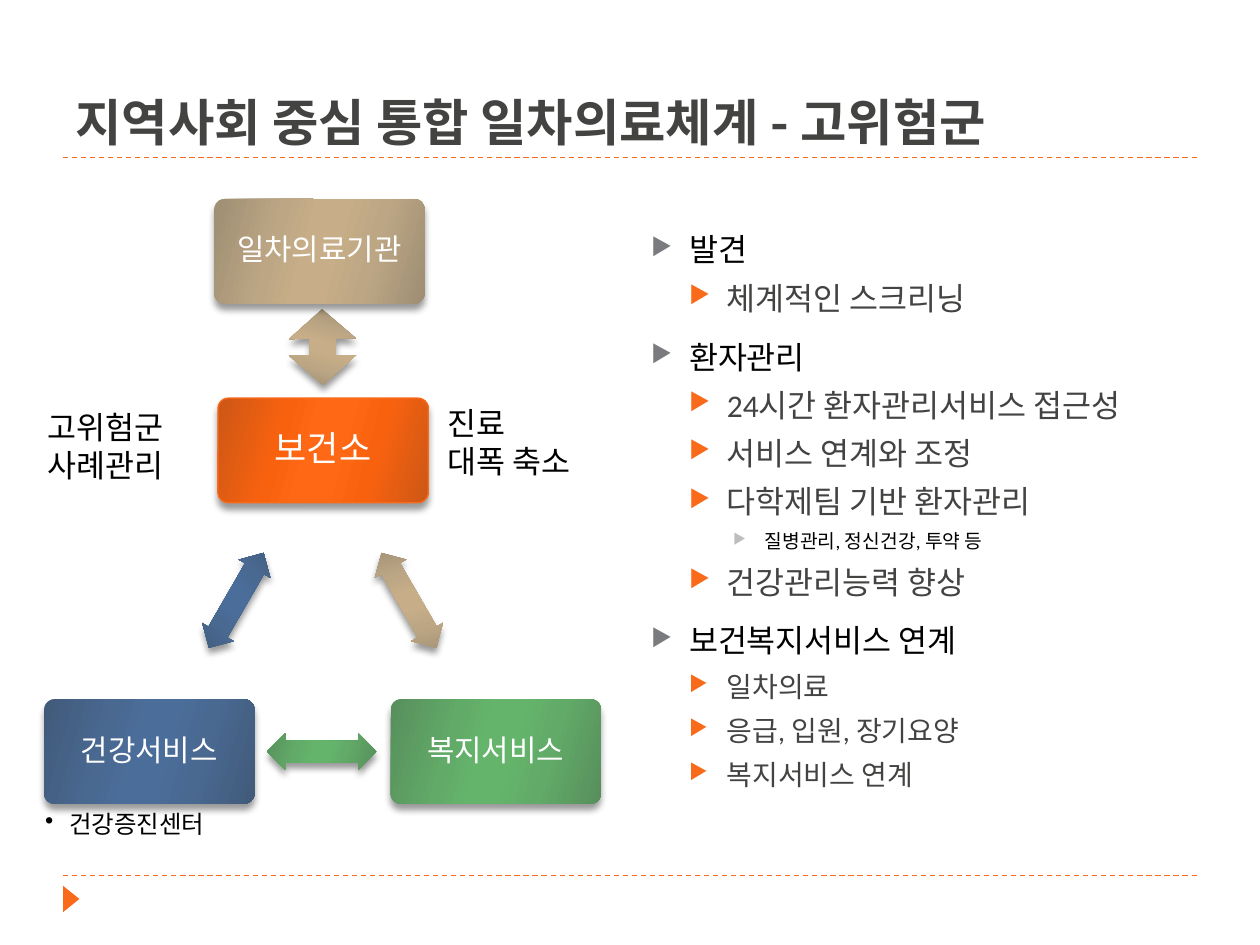
from lxml import etree
from pptx import Presentation
from pptx.dml.color import RGBColor
from pptx.enum.dml import MSO_LINE
from pptx.enum.shapes import MSO_CONNECTOR, MSO_SHAPE
from pptx.enum.text import MSO_ANCHOR, PP_ALIGN
from pptx.oxml.ns import qn
from pptx.util import Inches, Pt

BOX = MSO_SHAPE.ROUNDED_RECTANGLE
ARROW = MSO_SHAPE.LEFT_RIGHT_ARROW
TRIANGLE = MSO_SHAPE.ISOSCELES_TRIANGLE
STRAIGHT = MSO_CONNECTOR.STRAIGHT
DASH = MSO_LINE.DASH
TOP, MIDDLE, BOTTOM = MSO_ANCHOR.TOP, MSO_ANCHOR.MIDDLE, MSO_ANCHOR.BOTTOM
LEFT, CENTER = PP_ALIGN.LEFT, PP_ALIGN.CENTER

LATIN, KOREAN = "Calibri", "Noto Sans CJK KR"
ACCENT, DARK, BLACK, WHITE = "F96A1B", "434342", "000000", "FFFFFF"
# Gradient tones: edge, shoulder, centre
TAN = ("9F8E73", "BCA684", "C7AE88")
ORANGE = ("CC5716", "F8620F", "FF6815")
GREEN = ("578F5C", "62AA68", "64B56B")
BLUE = ("415A79", "496991", "4A6D9A")

COLUMNS, ROWS = 100, 75
NODE_SIZE = (16.7, 8.3)
LINK_SIZE = (8.7, 2.9)

# Outline level: indent, hanging, space before, bullet colour, text colour
LEVELS = [
    (0.3, 0.3, 12, "797B7E", BLACK),
    (0.6, 0.3, 6, ACCENT, DARK),
    (0.9, 0.25, 5, "BDBDBD", BLACK),
]
OUTLINE = [
    (0, 18, "발견"),
    (1, 18, "체계적인 스크리닝"),
    (0, 18, "환자관리"),
    (1, 18, "24시간 환자관리서비스 접근성"),
    (1, 18, "서비스 연계와 조정"),
    (1, 18, "다학제팀 기반 환자관리"),
    (2, 11, "질병관리, 정신건강, 투약 등"),
    (1, 18, "건강관리능력 향상"),
    (0, 18, "보건복지서비스 연계"),
    (1, 16, "일차의료"),
    (1, 16, "응급, 입원, 장기요양"),
    (1, 16, "복지서비스 연계"),
]
# Left, top, tones, label, text size, outline colour
NODES = [
    (17.3, 31.6, ORANGE, "보건소", 20, ACCENT),
    (31, 55.5, GREEN, "복지서비스", 17, None),
    (3.5, 55.5, BLUE, "건강서비스", 17, None),
    (17, 15.8, TAN, "일차의료기관", 17, None),
]
# Left, top, size, rotation, tones, adjustments
LINKS = [
    (28.1, 46.2, LINK_SIZE, 60, TAN, (0.6, 0.5)),
    (21.2, 58.2, LINK_SIZE, 180, GREEN, (0.6, 0.5)),
    (14.4, 46.2, LINK_SIZE, 300, BLUE, (0.6, 0.5)),
    (22.6, 24.9, (6, 5.3), 89.3, TAN, (0.39, 0.44)),
]


def rgb(color):
    return RGBColor.from_string(color)


def add_xml(parent, tag, **attributes):
    return etree.SubElement(parent, qn(tag), attributes)


class SlideBuilder:
    """Draws on one slide; positions count columns and rows of the grid."""

    def __init__(self, deck):
        self.column = deck.slide_width / COLUMNS
        self.row = deck.slide_height / ROWS
        self.slide = deck.slides.add_slide(deck.slide_layouts[6])

    def place(self, left, top, width, height):
        return (round(left * self.column), round(top * self.row),
                round(width * self.column), round(height * self.row))

    def rule(self, row):
        left, y, width, _ = self.place(5, row, 90, 0)
        rule = self.slide.shapes.add_connector(STRAIGHT, left, y, left + width, y)
        rule.line.color.rgb = rgb(ACCENT)
        rule.line.width = Pt(0.75)
        rule.line.dash_style = DASH
        add_xml(rule._element.spPr, "a:effectLst")

    def shape(self, kind, area, rotation=0, adjustments=()):
        shape = self.slide.shapes.add_shape(kind, *self.place(*area))
        shape.rotation = rotation
        for index, value in enumerate(adjustments):
            shape.adjustments[index] = value
        shape.shadow.inherit = False
        shape.line.fill.background()
        return shape

    def marker(self, area, color):
        marker = self.shape(TRIANGLE, area, 90)
        marker.fill.solid()
        marker.fill.fore_color.rgb = rgb(color)

    def glossy(self, kind, area, tones, rotation=0, adjustments=()):
        """Shape with a symmetric gradient and a soft shadow below."""
        shape = self.shape(kind, area, rotation, adjustments)
        shape.fill.gradient()
        shape.fill.gradient_angle = 344
        properties = shape._element.spPr
        stops = properties.find(".//" + qn("a:gsLst"))
        for stop in list(stops):
            stops.remove(stop)
        edge, shoulder, centre = tones
        for share, color in zip((0, 30, 45, 55, 73, 100),
                                (edge, shoulder, centre, centre, shoulder, edge)):
            stop = add_xml(stops, "a:gs", pos=str(share * 1000))
            add_xml(stop, "a:srgbClr", val=color)
        shadow = add_xml(properties.find(qn("a:effectLst")), "a:outerShdw",
                         blurRad=str(Pt(4)), dist=str(Pt(3.4)), dir="5400000",
                         rotWithShape="0")
        add_xml(add_xml(shadow, "a:srgbClr", val=BLACK), "a:alpha", val="40000")
        return shape

    def node(self, left, top, tones, label, size, outline):
        node = self.glossy(BOX, (left, top, *NODE_SIZE), tones, adjustments=(0.1,))
        if outline:
            node.line.color.rgb = rgb(outline)
            node.line.width = Pt(0.75)
        frame = node.text_frame
        frame.word_wrap = True
        frame.vertical_anchor = MIDDLE
        frame.text = label
        self.format(frame.paragraphs[0], size, WHITE, LATIN, align=CENTER, spacing=0.9)

    def format(self, paragraph, size, color, font, bold=False, align=LEFT, spacing=1):
        paragraph.alignment = align
        paragraph.line_spacing = spacing
        for run in paragraph.runs:
            run.font.size = Pt(size)
            run.font.bold = bold
            run.font.name = font
            run.font.color.rgb = rgb(color)
            add_xml(run.font._element, "a:ea", typeface=KOREAN)

    def bullet(self, paragraph, symbol, indent, hanging, color, percent=100):
        properties = paragraph._p.get_or_add_pPr()
        properties.set("marL", str(Inches(indent)))
        properties.set("indent", str(-Inches(hanging)))
        add_xml(add_xml(properties, "a:buClr"), "a:srgbClr", val=color)
        add_xml(properties, "a:buSzPct", val=str(percent * 1000))
        add_xml(properties, "a:buChar", char=symbol)

    def text(self, area, content, size, color=BLACK, font=KOREAN, bold=False,
             anchor=TOP, spacing=1):
        frame = self.slide.shapes.add_textbox(*self.place(*area)).text_frame
        frame.word_wrap = True
        frame.vertical_anchor = anchor
        frame.text = content
        for paragraph in frame.paragraphs:
            self.format(paragraph, size, color, font, bold, spacing=spacing)
        return frame

    def outline(self, area, items):
        frame = self.text(area, "\n".join(item[2] for item in items), 18, font=LATIN)
        for paragraph, (level, size, _) in zip(frame.paragraphs, items):
            indent, hanging, before, bullet_color, color = LEVELS[level]
            paragraph.level = level
            paragraph.space_before = Pt(before)
            for run in paragraph.runs:
                run.font.size = Pt(size)
                run.font.color.rgb = rgb(color)
            self.bullet(paragraph, "▶", indent, hanging, bullet_color, 76)


def main():
    deck = Presentation()
    deck.slide_width, deck.slide_height = Inches(10), Inches(7.5)
    page = SlideBuilder(deck)

    for row in (69.5, 12.5):
        page.rule(row)
    page.marker((4.6, 70.7, 2.1, 1.3), ACCENT)
    page.text((5, 2.5, 90, 10), "지역사회 중심 통합 일차의료체계 - 고위험군", 28.8,
              DARK, bold=True, anchor=BOTTOM, spacing=1.2)
    page.outline((50.7, 17.8, 45.8, 51.7), OUTLINE)

    for left, top, size, rotation, tones, adjustments in LINKS:
        page.glossy(ARROW, (left, top, *size), tones, rotation, adjustments)
    for node in NODES:
        page.node(*node)

    page.text((2.8, 31.9, 13.5, 7.1), "고위험군\n사례관리", 18)
    page.text((34.5, 31.6, 14.1, 7.1), "진료 \v대폭 축소", 18)
    center = page.text((2.6, 63.7, 19.5, 3.4), "건강증진센터", 14)
    page.bullet(center.paragraphs[0], "•", 0.19, 0.19, BLACK)

    deck.save("out.pptx")


if __name__ == "__main__":
    main()
